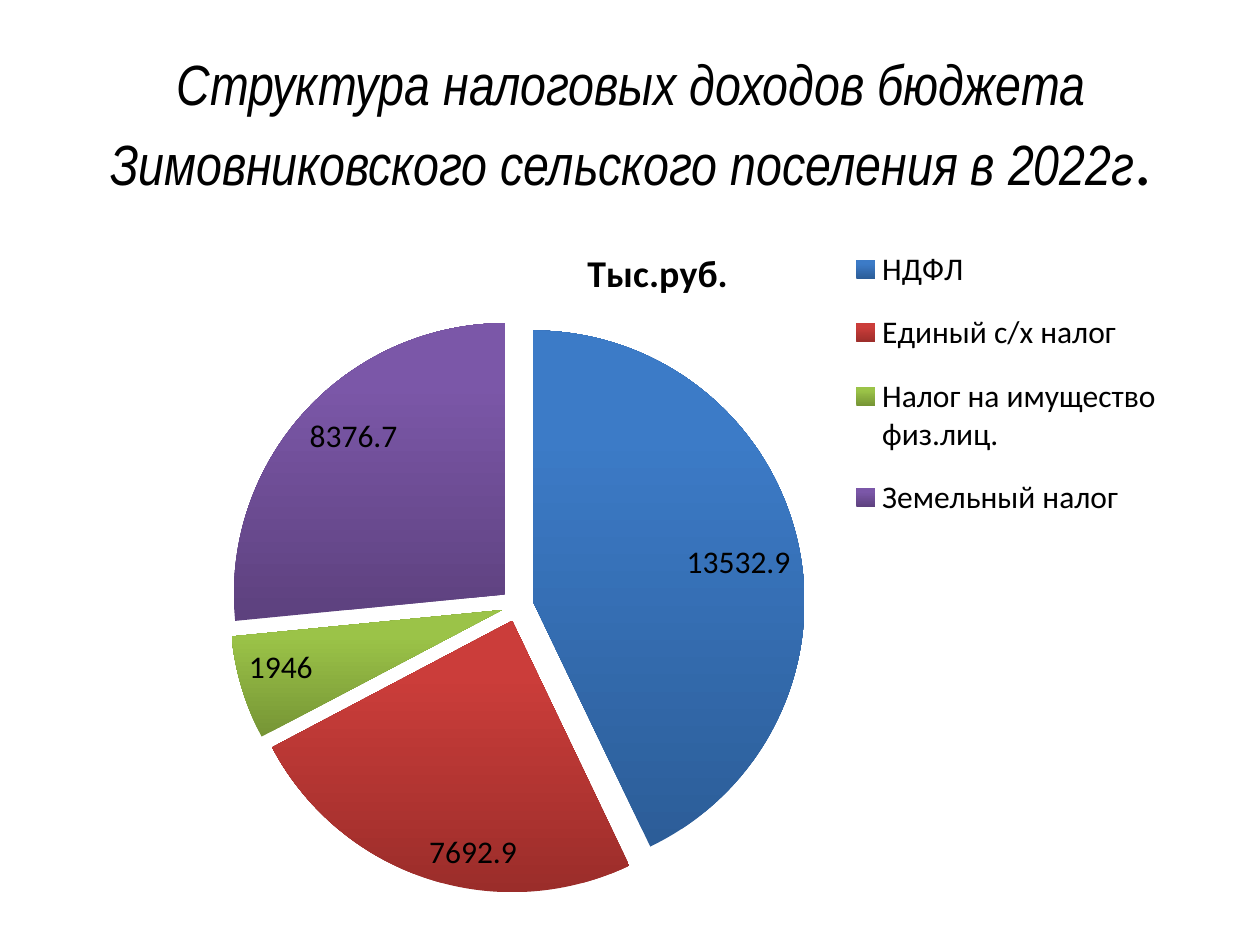
from lxml import etree
from pptx import Presentation
from pptx.chart.data import CategoryChartData
from pptx.dml.color import RGBColor
from pptx.enum.chart import XL_CHART_TYPE as ChartType
from pptx.enum.chart import XL_LABEL_POSITION as LabelPos
from pptx.enum.chart import XL_LEGEND_POSITION as LegendPos
from pptx.enum.text import MSO_ANCHOR as Anchor
from pptx.enum.text import PP_ALIGN as Align
from pptx.oxml.ns import qn
from pptx.util import Pt

BLACK = RGBColor(0x00, 0x00, 0x00)
# category, value, colour at the foot of the pie, colour at its top
TAXES = [
    ("НДФЛ", 13532.9, RGBColor(0x2C, 0x5D, 0x98), RGBColor(0x3C, 0x7B, 0xC7)),
    ("Единый с/х налог", 7692.9, RGBColor(0x9B, 0x2D, 0x2A), RGBColor(0xCB, 0x3D, 0x3A)),
    ("Налог на имущество физ.лиц.", 1946, RGBColor(0x76, 0x95, 0x35), RGBColor(0x9B, 0xC3, 0x48)),
    ("Земельный налог", 8376.7, RGBColor(0x5D, 0x41, 0x7E), RGBColor(0x7B, 0x57, 0xA8)),
]


def format_font(font, size, name="Calibri", bold=False, italic=False):
    font.size, font.name, font.bold, font.italic = Pt(size), name, bold, italic
    font.color.rgb = BLACK


def add_text(p, text, **fmt):
    r = p.add_run()
    r.text = text
    format_font(r.font, **fmt)


def set_layout(parent, before, inner=False, **fractions):
    """Place a chart part by fractions of the chart; `before` lists the tags that follow it."""
    for old in parent.findall(qn("c:layout")):
        parent.remove(old)
    layout = etree.Element(qn("c:layout"))
    manual = etree.SubElement(layout, qn("c:manualLayout"))
    if inner:
        etree.SubElement(manual, qn("c:layoutTarget")).set("val", "inner")
    for axis in ("x", "y"):
        etree.SubElement(manual, qn(f"c:{axis}Mode")).set("val", "edge")
    for key, value in fractions.items():
        etree.SubElement(manual, qn(f"c:{key}")).set("val", str(value))
    follower = next(el for el in parent if el.tag in [qn(t) for t in before])
    follower.addprevious(layout)


def place_title(slide, x, y, w, h):
    sp = slide.shapes.title
    sp.left, sp.top, sp.width, sp.height = Pt(x), Pt(y), Pt(w), Pt(h)
    tf = sp.text_frame
    tf.word_wrap = True
    tf.vertical_anchor = Anchor.MIDDLE
    p = tf.paragraphs[0]
    p.alignment = Align.CENTER
    add_text(p, "Структура налоговых доходов бюджета Зимовниковского сельского поселения в 2022г",
             size=32.4, name="Arial Narrow", italic=True)
    add_text(p, ".", size=39.6)


def explode_slices(series, percent):
    explosion = etree.Element(qn("c:explosion"))
    explosion.set("val", str(percent))
    series._element.find(qn("c:tx")).addnext(explosion)


def color_slices(series):
    for i, (_, _, foot, top) in enumerate(TAXES):
        fmt = series.points[i].format
        fmt.fill.gradient()
        fmt.fill.gradient_angle = 90
        for stop, color, position in zip(fmt.fill.gradient_stops, (foot, top), (0, 0.8)):
            stop.color.rgb = color
            stop.position = position
        fmt.line.fill.background()


def add_tax_pie(slide, x, y, w, h):
    data = CategoryChartData()
    data.categories = [tax[0] for tax in TAXES]
    data.add_series("Тыс.руб.", [tax[1] for tax in TAXES])
    chart = slide.shapes.add_chart(ChartType.PIE, Pt(x), Pt(y), Pt(w), Pt(h), data).chart
    format_font(chart.font, 18)

    chart.has_title = True
    title = chart.chart_title
    add_text(title.text_frame.paragraphs[0], "Тыс.руб.", size=21.6, bold=True)
    title.include_in_layout = False
    set_layout(title._element, ["c:overlay"], x=0.44, y=0.05)

    chart.has_legend = True
    chart.legend.position = LegendPos.RIGHT
    chart.legend.include_in_layout = False
    format_font(chart.legend.font, 18)
    set_layout(chart.legend._element, ["c:overlay"], x=0.66, y=0.03, w=0.3, h=0.45)

    plot = chart.plots[0]
    plot.vary_by_categories = True
    set_layout(plot._element.getparent(), ["c:pieChart"], inner=True,
               x=0.135, y=0.16, w=0.5, h=0.82)
    plot.has_data_labels = True
    labels = plot.data_labels
    labels.show_value = True
    labels.show_percentage = False
    labels.position = LabelPos.INSIDE_END
    format_font(labels.font, 18)

    series = plot.series[0]
    color_slices(series)
    explode_slices(series, 6)


def main():
    prs = Presentation()
    prs.slide_width, prs.slide_height = Pt(720), Pt(540)
    slide = prs.slides.add_slide(prs.slide_layouts[5])
    place_title(slide, 36.7, 26, 648, 90)
    add_tax_pie(slide, 42.5, 116.6, 657.4, 402.5)
    prs.save("out.pptx")


if __name__ == "__main__":
    main()
